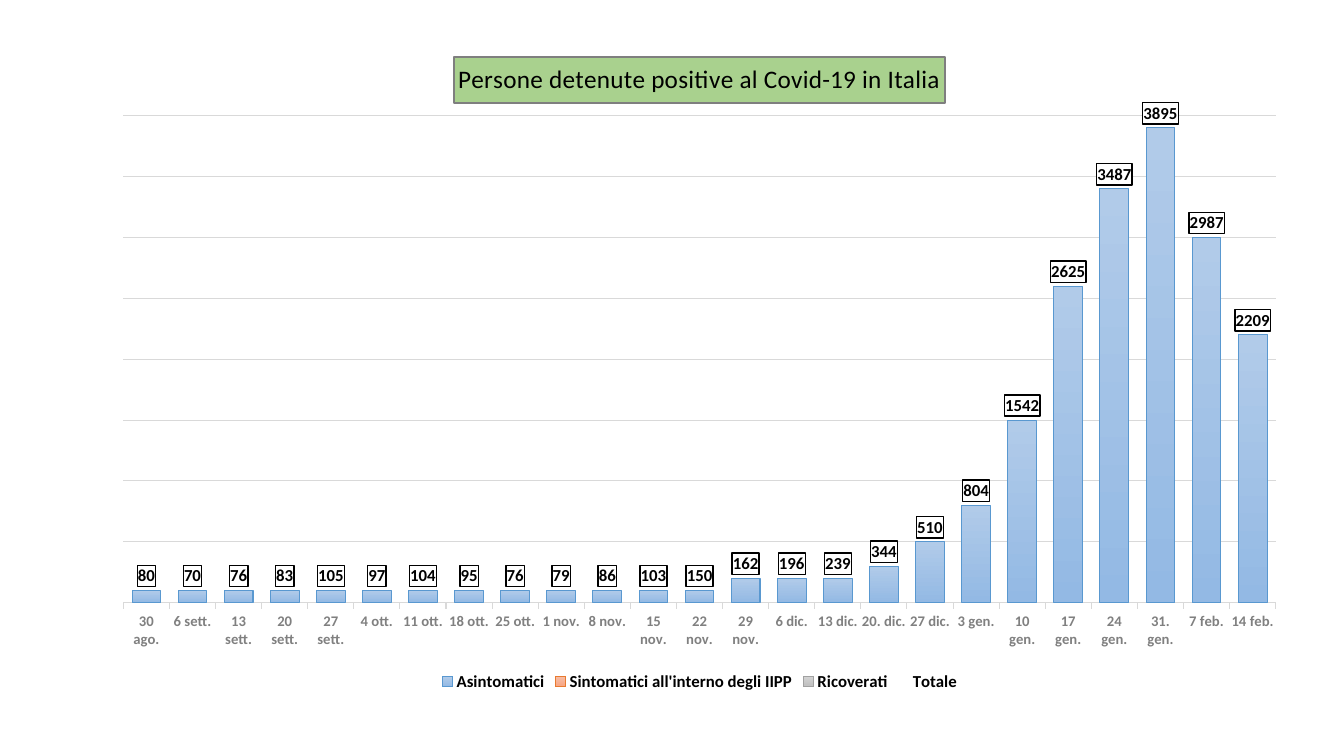
import dataclasses

import lxml.etree
import pptx
import pptx.chart.data
import pptx.dml.color
import pptx.enum.chart
import pptx.oxml
import pptx.oxml.ns
import pptx.util

Cm = pptx.util.Cm
Pt = pptx.util.Pt
qn = pptx.oxml.ns.qn


@dataclasses.dataclass(frozen=True)
class Theme:
    font: str = "Calibri"
    text: str = "000000"
    white: str = "FFFFFF"
    muted: str = "808080"
    grid: str = "D9D9D9"
    title_fill: str = "A9D18E"
    title_line: str = "7F7F7F"
    bars: tuple = (
        ("B1CBE9", "93B9E4", "5998D0"),
        ("F7BDA5", "F8A582", "E87A30"),
        ("D2D2D2", "C0C0C0", "A1A1A1"),
    )
    title_size: float = 18
    label_size: float = 12
    axis_size: float = 10.5
    base_size: float = 10
    hairline: float = 0.75


THEME = Theme()

WEEKS = [
    "30 ago.", "6 sett.", "13 sett.", "20 sett.", "27 sett.",
    "4 ott.", "11 ott.", "18 ott.", "25 ott.", "1 nov.",
    "8 nov.", "15 nov.", "22 nov.", "29 nov.", "6 dic.",
    "13 dic.", "20. dic.", "27 dic.", "3 gen.", "10 gen.",
    "17 gen.", "24 gen.", "31. gen.", "7 feb.", "14 feb.",
]
TOTALS = [
    80, 70, 76, 83, 105, 97, 104, 95, 76, 79, 86, 103, 150,
    162, 196, 239, 344, 510, 804, 1542, 2625, 3487, 3895, 2987, 2209,
]
ASYMPTOMATIC = [100] * 13 + [
    200, 200, 200, 300, 500, 800, 1500, 2600, 3400, 3900, 3000, 2200,
]
SYMPTOMATIC = [0] * len(WEEKS)
HOSPITAL = [0] * len(WEEKS)


def rgb(color):
    return pptx.dml.color.RGBColor.from_string(color)


def style_font(font, size, color, bold):
    font.name = THEME.font
    font.size = Pt(size)
    font.bold = bold
    font.color.rgb = rgb(color)


def style_line(line, color, width=THEME.hairline):
    line.color.rgb = rgb(color)
    line.width = Pt(width)


def set_layout(parent, index, inner=False, **box):
    for old in parent.findall(qn("c:layout")):
        parent.remove(old)
    layout = lxml.etree.Element(qn("c:layout"))
    manual = lxml.etree.SubElement(layout, qn("c:manualLayout"))
    if inner:
        lxml.etree.SubElement(manual, qn("c:layoutTarget"), val="inner")
    for mode in ("xMode", "yMode"):
        lxml.etree.SubElement(manual, qn("c:" + mode), val="edge")
    for side, value in box.items():
        lxml.etree.SubElement(manual, qn("c:" + side), val=str(value))
    parent.insert(index, layout)


def format_title(chart, width, height):
    title = chart.chart_title
    tf = title.text_frame
    tf.text = "Persone detenute positive al Covid-19 in Italia"
    r = tf.paragraphs[0].runs[0]
    style_font(r.font, THEME.title_size, THEME.text, False)
    r.font._element.set("spc", "20")
    title.format.fill.solid()
    title.format.fill.fore_color.rgb = rgb(THEME.title_fill)
    style_line(title.format.line, THEME.title_line, 1.5)
    set_layout(title._element, 1, x=Cm(8.92) / width, y=Cm(0.47) / height)


def format_axes(chart):
    weeks = chart.category_axis
    weeks.major_tick_mark = pptx.enum.chart.XL_TICK_MARK.OUTSIDE
    style_font(weeks.tick_labels.font, THEME.axis_size, THEME.muted, True)
    style_line(weeks.format.line, THEME.grid)
    people = chart.value_axis
    people.minimum_scale, people.maximum_scale = 0, 4000
    people.major_unit = 500
    people.visible = False
    people.has_major_gridlines = True
    style_line(people.major_gridlines.format.line, THEME.grid)


def format_bars(plot):
    plot.gap_width = 60
    plot.overlap = 100
    plot.vary_by_categories = False
    for series, (top, bottom, edge) in zip(plot.series, THEME.bars):
        fill = series.format.fill
        fill.gradient()
        fill.gradient_angle = 270
        for stop, color in zip(fill.gradient_stops, (top, bottom)):
            stop.color.rgb = rgb(color)
        style_line(series.format.line, edge)


def format_totals(series):
    series.format.fill.background()
    series.format.line.fill.background()
    labels = series.data_labels
    labels.show_value = True
    labels.position = pptx.enum.chart.XL_LABEL_POSITION.INSIDE_BASE
    style_font(labels.font, THEME.label_size, THEME.text, True)
    frame = pptx.oxml.parse_xml(
        f'<c:spPr {pptx.oxml.ns.nsdecls("c", "a")}>'
        f'<a:solidFill><a:srgbClr val="{THEME.white}"/></a:solidFill>'
        f'<a:ln w="{Pt(1)}"><a:solidFill><a:srgbClr val="{THEME.text}"/>'
        '</a:solidFill></a:ln></c:spPr>'
    )
    labels._element.find(qn("c:txPr")).addprevious(frame)


def add_cases_chart(s, left, top, width, height):
    data = pptx.chart.data.CategoryChartData()
    data.categories = WEEKS
    data.add_series("Asintomatici", ASYMPTOMATIC)
    data.add_series("Sintomatici all'interno degli IIPP", SYMPTOMATIC)
    data.add_series("Ricoverati", HOSPITAL)
    data.add_series("Totale", TOTALS)
    chart = s.shapes.add_chart(
        pptx.enum.chart.XL_CHART_TYPE.COLUMN_STACKED, left, top, width, height, data
    ).chart
    style_font(chart.font, THEME.base_size, THEME.text, False)
    format_title(chart, width, height)
    format_axes(chart)
    plot = chart.plots[0]
    format_bars(plot)
    format_totals(plot.series[3])
    chart.has_legend = True
    chart.legend.position = pptx.enum.chart.XL_LEGEND_POSITION.BOTTOM
    chart.legend.include_in_layout = False
    style_font(chart.legend.font, THEME.label_size, THEME.text, True)
    plot_area = chart._chartSpace.find(".//" + qn("c:plotArea"))
    set_layout(
        plot_area, 0, inner=True,
        x=Cm(0.6) / width, y=Cm(1.95) / height,
        w=Cm(29.04) / width, h=Cm(12.27) / height,
    )


def main():
    prs = pptx.Presentation()
    prs.slide_width, prs.slide_height = Cm(33.87), Cm(19.05)
    s = prs.slides.add_slide(prs.slide_layouts[6])
    add_cases_chart(s, Cm(2.51), Cm(0.97), Cm(30.25), Cm(16.56))
    prs.save("out.pptx")


if __name__ == "__main__":
    main()
